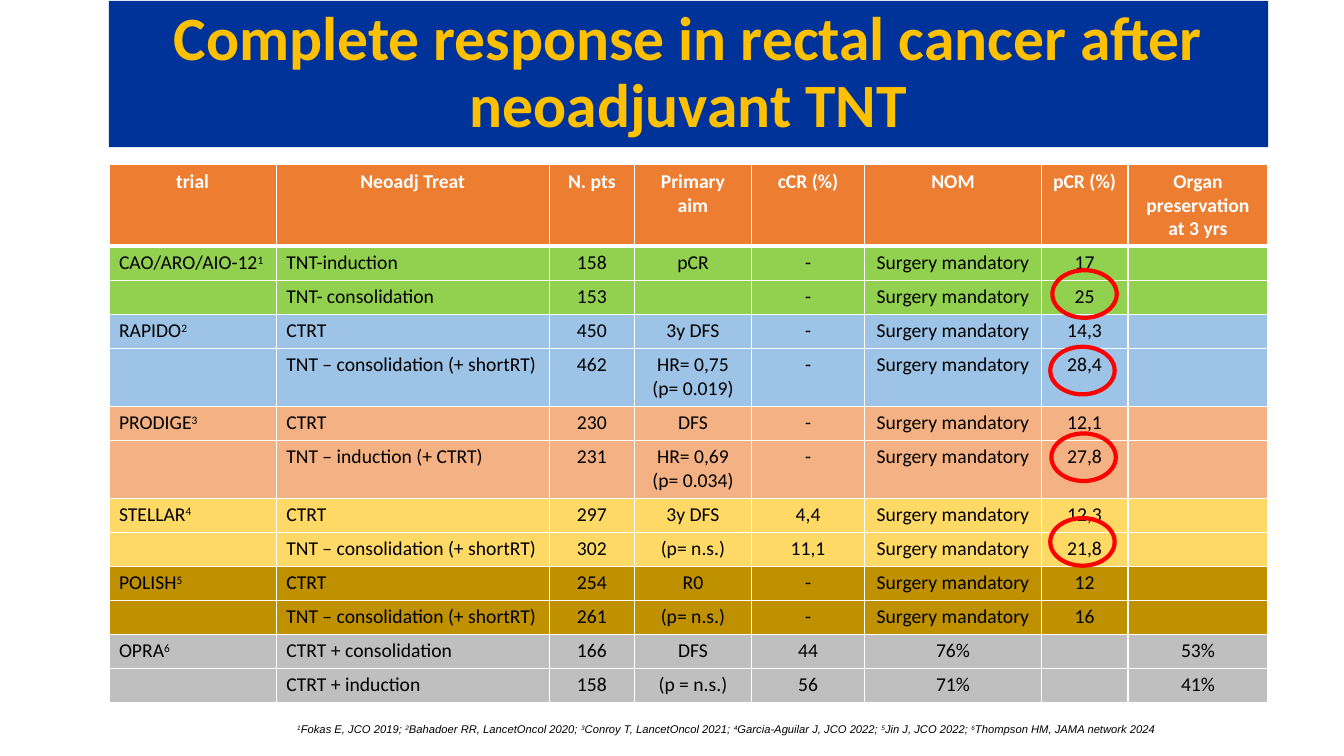
from dataclasses import dataclass
from typing import Any

import lxml.etree
import pptx
import pptx.dml.color
import pptx.enum.shapes
import pptx.enum.text
import pptx.oxml.ns
import pptx.util

Pt = pptx.util.Pt
RGB = pptx.dml.color.RGBColor.from_string
ALIGN = pptx.enum.text.PP_ALIGN
ANCHOR = pptx.enum.text.MSO_ANCHOR
AUTO_SIZE = pptx.enum.text.MSO_AUTO_SIZE


# Colours and type
@dataclass(frozen=True)
class Theme:
    banner: str = "003399"
    title: str = "FFC000"
    header: str = "ED7D31"
    white: str = "FFFFFF"
    ink: str = "000000"
    highlight: str = "FF0000"
    body_font: str = "Calibri"
    citation_font: str = "Arial"
    title_size: float = 44
    table_size: float = 14
    citation_size: float = 8


THEME = Theme()
TITLE_FORMAT = {"name": THEME.body_font, "size": Pt(THEME.title_size), "bold": True}
HEADER_FORMAT = {"name": THEME.body_font, "size": Pt(THEME.table_size), "bold": True}
BODY_FORMAT = {**HEADER_FORMAT, "bold": False}
CITATION_FORMAT = {"name": THEME.citation_font, "size": Pt(THEME.citation_size), "italic": True}


# Content
@dataclass(frozen=True)
class Arm:
    treatment: str
    patients: str
    aim: str
    ccr: str
    nom: str
    pcr: str
    organ: str = ""

    def values(self) -> list[str]:
        return [self.treatment, self.patients, self.aim, self.ccr,
                self.nom, self.pcr, self.organ]


@dataclass(frozen=True)
class Trial:
    name: str
    fill: str
    citation: str
    arms: tuple[Arm, Arm]


@dataclass(frozen=True)
class Column:
    heading: str
    width: float
    align: Any = ALIGN.CENTER


@dataclass(frozen=True)
class Ring:
    left: float
    top: float


SURGERY = "Surgery mandatory"
SHORT_RT = "TNT – consolidation (+ shortRT)"
TRIALS = [
    Trial("CAO/ARO/AIO-12", "92D050", "Fokas E, JCO 2019; ", (
        Arm("TNT-induction", "158", "pCR", "-", SURGERY, "17"),
        Arm("TNT- consolidation", "153", "", "-", SURGERY, "25"))),
    Trial("RAPIDO", "9DC3E6", "Bahadoer RR, LancetOncol 2020; ", (
        Arm("CTRT", "450", "3y DFS", "-", SURGERY, "14,3"),
        Arm(SHORT_RT, "462", "HR= 0,75 (p= 0.019)", "-", SURGERY, "28,4"))),
    Trial("PRODIGE", "F4B183", "Conroy T, LancetOncol 2021; ", (
        Arm("CTRT", "230", "DFS", "-", SURGERY, "12,1"),
        Arm("TNT – induction (+ CTRT)", "231", "HR= 0,69 (p= 0.034)", "-", SURGERY, "27,8"))),
    Trial("STELLAR", "FFD966", "Garcia-Aguilar J, JCO 2022; ", (
        Arm("CTRT", "297", "3y DFS", "4,4", SURGERY, "12,3"),
        Arm(SHORT_RT, "302", "(p= n.s.)", "11,1", SURGERY, "21,8"))),
    Trial("POLISH", "BF9000", "Jin J, JCO 2022; ", (
        Arm("CTRT", "254", "R0", "-", SURGERY, "12"),
        Arm(SHORT_RT, "261", "(p= n.s.)", "-", SURGERY, "16"))),
    Trial("OPRA", "BFBFBF", "Thompson HM, JAMA network 2024", (
        Arm("CTRT + consolidation", "166", "DFS", "44", "76%", "", "53%"),
        Arm("CTRT + induction", "158", "(p = n.s.)", "56", "71%", "", "41%"))),
]
COLUMNS = [
    Column("trial", 119.5, ALIGN.LEFT), Column("Neoadj Treat", 195, ALIGN.LEFT),
    Column("N. pts", 61), Column("Primary aim", 83.5), Column("cCR (%)", 81),
    Column("NOM", 126), Column("pCR (%)", 62), Column("Organ preservation at 3 yrs", 100),
]
RINGS = [Ring(751.7, 193), Ring(750.2, 247.7), Ring(751, 309.6), Ring(750.2, 370.1)]
LEFT, WIDTH = 77.8, 828
HEADER_HEIGHT, ROW_HEIGHT, TALL_ROW_HEIGHT = 58.4, 24.3, 41.4


# Drawing helpers
def apply_format(target: Any, values: dict[str, Any]) -> None:
    for attribute, value in values.items():
        setattr(target, attribute, value)


def add_run(paragraph: Any, text: str, style: dict[str, Any], color: str,
            raised: bool = False) -> None:
    run = paragraph.add_run()
    run.text = text
    apply_format(run.font, style)
    run.font.color.rgb = RGB(color)
    if raised:
        run._r.get_or_add_rPr().set("baseline", "30000")


def add_border(cell: Any, bottom: float) -> None:
    properties = cell._tc.get_or_add_tcPr()
    for edge, width in {"lnL": 1, "lnR": 1, "lnT": 1, "lnB": bottom}.items():
        line = lxml.etree.SubElement(properties, pptx.oxml.ns.qn(f"a:{edge}"), w=str(Pt(width)))
        solid = lxml.etree.SubElement(line, pptx.oxml.ns.qn("a:solidFill"))
        lxml.etree.SubElement(solid, pptx.oxml.ns.qn("a:srgbClr"), val=THEME.white)


def fill_cell(cell: Any, text: str, fill: str, align: Any, style: dict[str, Any],
              color: str, note: str = "", bottom: float = 1) -> None:
    add_border(cell, bottom)
    cell.fill.solid()
    cell.fill.fore_color.rgb = RGB(fill)
    paragraph = cell.text_frame.paragraphs[0]
    paragraph.alignment = align
    if text:
        add_run(paragraph, text, style, color)
    else:  # an empty cell must not stretch its row
        paragraph._p.get_or_add_endParaRPr().set("sz", str(int(THEME.table_size * 100)))
    if note:
        add_run(paragraph, note, style, color, raised=True)


def draw_title(slide: Any) -> None:
    title = slide.shapes.title
    apply_format(title, {"left": Pt(LEFT), "top": Pt(0.7), "width": Pt(WIDTH), "height": Pt(104.4)})
    title.fill.solid()
    title.fill.fore_color.rgb = RGB(THEME.banner)
    apply_format(title.text_frame, {"word_wrap": True, "auto_size": AUTO_SIZE.NONE,
                                    "vertical_anchor": ANCHOR.MIDDLE})
    paragraph = title.text_frame.paragraphs[0]
    apply_format(paragraph, {"alignment": ALIGN.CENTER, "line_spacing": 0.9})
    add_run(paragraph, "Complete response in rectal cancer after neoadjuvant TNT",
            TITLE_FORMAT, THEME.title)


def draw_trials(slide: Any) -> None:
    arms = [(trial, number, index, arm) for number, trial in enumerate(TRIALS, 1)
            for index, arm in enumerate(trial.arms)]
    heights = [HEADER_HEIGHT] + [TALL_ROW_HEIGHT if arm.aim.startswith("HR") else ROW_HEIGHT
                                 for _, _, _, arm in arms]
    results = slide.shapes.add_table(len(heights), len(COLUMNS), Pt(LEFT), Pt(117.5),
                                     Pt(WIDTH), Pt(sum(heights))).table
    results.horz_banding = False
    for row, height in zip(results.rows, heights):
        row.height = Pt(height)
    for position, column in enumerate(COLUMNS):
        results.columns[position].width = Pt(column.width)
        fill_cell(results.cell(0, position), column.heading, THEME.header, ALIGN.CENTER,
                  HEADER_FORMAT, THEME.white, bottom=3)
    for row_number, (trial, number, index, arm) in enumerate(arms, 1):
        first = index == 0
        texts = [trial.name if first else "", *arm.values()]
        for position, (column, text) in enumerate(zip(COLUMNS, texts)):
            note = str(number) if first and position == 0 else ""
            fill_cell(results.cell(row_number, position), text, trial.fill, column.align,
                      BODY_FORMAT, THEME.ink, note)


def draw_citations(slide: Any) -> None:
    citations = slide.shapes.add_textbox(Pt(205.2), Pt(512.6), Pt(650.9), Pt(17.3)).text_frame
    apply_format(citations, {"word_wrap": False, "auto_size": AUTO_SIZE.SHAPE_TO_FIT_TEXT})
    for number, trial in enumerate(TRIALS, 1):
        add_run(citations.paragraphs[0], str(number), CITATION_FORMAT, THEME.ink, raised=True)
        add_run(citations.paragraphs[0], trial.citation, CITATION_FORMAT, THEME.ink)


def draw_ring(slide: Any, ring: Ring) -> None:
    highlight = slide.shapes.add_shape(pptx.enum.shapes.MSO_SHAPE.OVAL, Pt(ring.left),
                                       Pt(ring.top), Pt(46), Pt(34))
    highlight.shadow.inherit = False
    highlight.fill.background()
    highlight.line.color.rgb = RGB(THEME.highlight)
    highlight.line.width = Pt(3)


def main() -> None:
    deck = pptx.Presentation()
    apply_format(deck, {"slide_width": Pt(960), "slide_height": Pt(540)})
    slide = deck.slides.add_slide(deck.slide_layouts[5])
    draw_title(slide)
    draw_trials(slide)
    draw_citations(slide)
    for ring in RINGS:
        draw_ring(slide, ring)
    deck.save("out.pptx")


if __name__ == "__main__":
    main()
